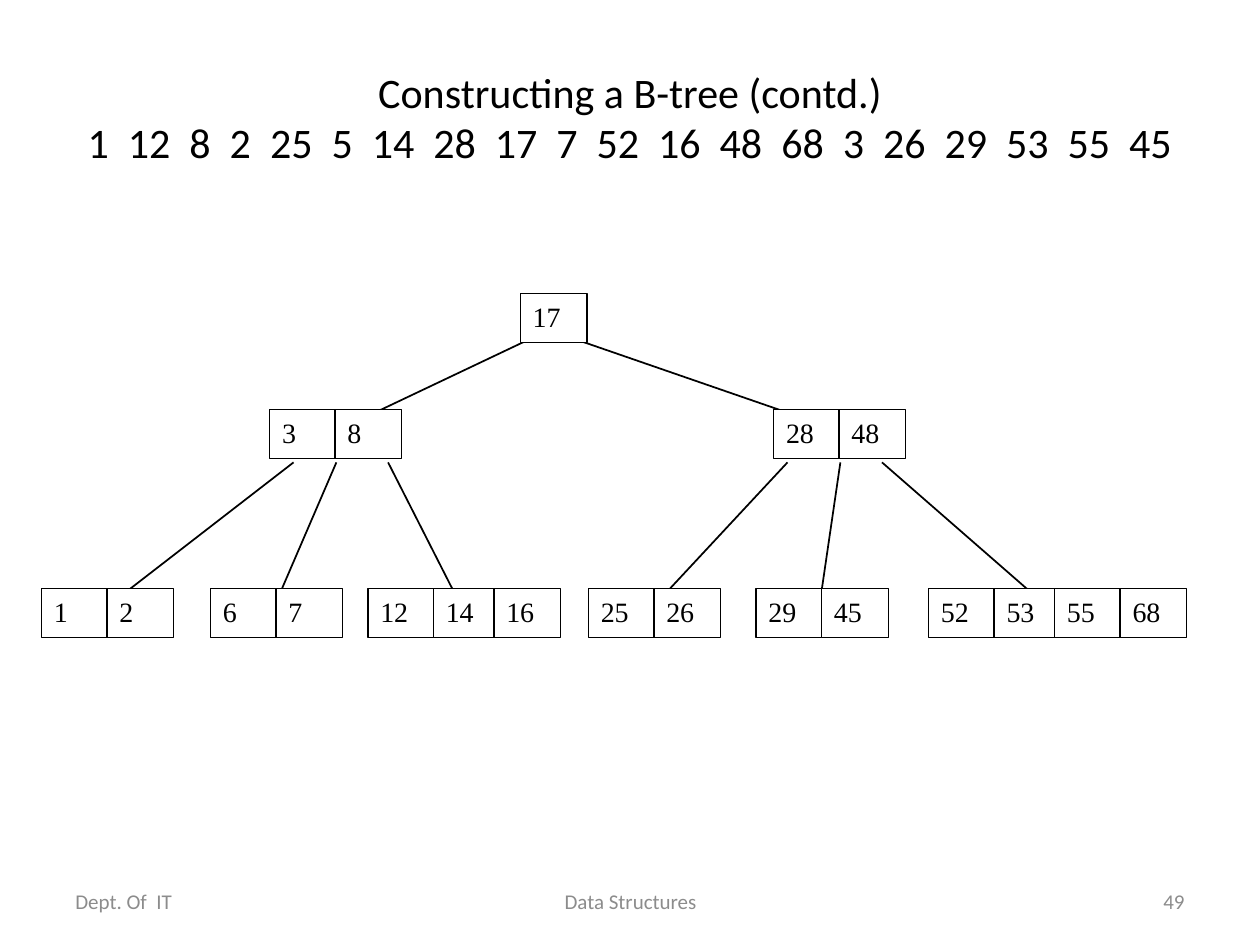
from dataclasses import dataclass

from pptx import Presentation
from pptx.dml.color import RGBColor
from pptx.enum.shapes import MSO_CONNECTOR, MSO_SHAPE
from pptx.enum.text import MSO_ANCHOR, PP_ALIGN
from pptx.oxml.ns import qn
from pptx.slide import Slide
from pptx.text.text import TextFrame
from pptx.util import Inches, Pt
from lxml import etree

LEFT, CENTER, RIGHT = PP_ALIGN.LEFT, PP_ALIGN.CENTER, PP_ALIGN.RIGHT
TOP, MIDDLE = MSO_ANCHOR.TOP, MSO_ANCHOR.MIDDLE
RECT = MSO_SHAPE.RECTANGLE
LINE = MSO_CONNECTOR.STRAIGHT

BLACK, WHITE, GRAY = "000000", "FFFFFF", "8C8C8C"
SANS, SERIF = "Calibri", "Times New Roman"
STEPS = (0, 0.52, 1, 1.52)
CELL_W, CELL_H = 0.53, 0.39
ROOT_Y, MID_Y, LEAF_Y = 2.33, 3.25, 4.67


@dataclass
class Node:
    left: float
    top: float
    keys: tuple[int, ...]


@dataclass
class Edge:
    start: float
    end: float
    top: float
    bottom: float


@dataclass
class Label:
    text: str
    left: float
    top: float
    width: float
    height: float
    align: PP_ALIGN
    size: int
    color: str


NODES = [
    Node(4.13, ROOT_Y, (17,)),
    Node(2.14, MID_Y, (3, 8)),
    Node(6.14, MID_Y, (28, 48)),
    Node(0.33, LEAF_Y, (1, 2)),
    Node(1.67, LEAF_Y, (6, 7)),
    Node(2.92, LEAF_Y, (12, 14, 16)),
    Node(4.67, LEAF_Y, (25, 26)),
    Node(6, LEAF_Y, (29, 45)),
    Node(7.37, LEAF_Y, (52, 53, 55, 68)),
]

LEAF_ENDS = [(2.33, 0.83), (2.67, 2.17), (3.08, 3.67),
             (6.25, 5.17), (6.67, 6.5), (7, 8.33)]
ROOT_ENDS = [(4.25, 2.67), (4.5, 6.67)]
EDGES = [Edge(a, b, 3.67, 4.83) for a, b in LEAF_ENDS]
EDGES += [Edge(a, b, 2.67, 3.42) for a, b in ROOT_ENDS]

TITLE = ("Constructing a B-tree (contd.)\v"
         "1  12  8  2  25  5  14  28  17  7  52  16  48  68  3  26  29  53  55  45")
LABELS = [
    Label(TITLE, 0.5, 0.3, 9, 1.25, CENTER, 24, BLACK),
    Label("Dept. Of  IT", 0.5, 6.95, 2.33, 0.4, LEFT, 12, GRAY),
    Label("Data Structures", 3.42, 6.95, 3.17, 0.4, CENTER, 12, GRAY),
    Label("49", 7.17, 6.95, 2.33, 0.4, RIGHT, 12, GRAY),
]


def paint(form, color: str) -> None:
    form.rgb = RGBColor.from_string(color)


def write(frame: TextFrame, text: str, font: str, size: int, color: str,
          align: PP_ALIGN, anchor: MSO_ANCHOR) -> None:
    frame.word_wrap = True
    frame.vertical_anchor = anchor
    para = frame.paragraphs[0]
    para.text = text
    para.alignment = align
    for run in para.runs:
        run.font.name = font
        run.font.size = Pt(size)
        paint(run.font.color, color)


def draw_edge(slide: Slide, edge: Edge) -> None:
    line = slide.shapes.add_connector(
        LINE, Inches(edge.start), Inches(edge.top),
        Inches(edge.end), Inches(edge.bottom))
    line.line.width = Pt(1)
    paint(line.line.color, BLACK)
    etree.SubElement(line._element.spPr, qn("a:effectLst"))


def draw_label(slide: Slide, label: Label) -> None:
    box = slide.shapes.add_textbox(
        Inches(label.left), Inches(label.top),
        Inches(label.width), Inches(label.height))
    write(box.text_frame, label.text, SANS, label.size, label.color,
          label.align, MIDDLE)


def draw_node(slide: Slide, node: Node) -> None:
    for step, key in zip(STEPS, node.keys):
        cell = slide.shapes.add_shape(
            RECT, Inches(node.left + step), Inches(node.top),
            Inches(CELL_W), Inches(CELL_H))
        cell.shadow.inherit = False
        cell.fill.solid()
        paint(cell.fill.fore_color, WHITE)
        cell.line.width = Pt(0.75)
        paint(cell.line.color, BLACK)
        write(cell.text_frame, str(key), SERIF, 16, BLACK, LEFT, TOP)


def main() -> None:
    deck = Presentation()
    deck.slide_width, deck.slide_height = Inches(10), Inches(7.5)
    slide = deck.slides.add_slide(deck.slide_layouts[6])
    for edge in EDGES:
        draw_edge(slide, edge)
    for label in LABELS:
        draw_label(slide, label)
    for node in NODES:
        draw_node(slide, node)
    deck.save("out.pptx")


if __name__ == "__main__":
    main()
